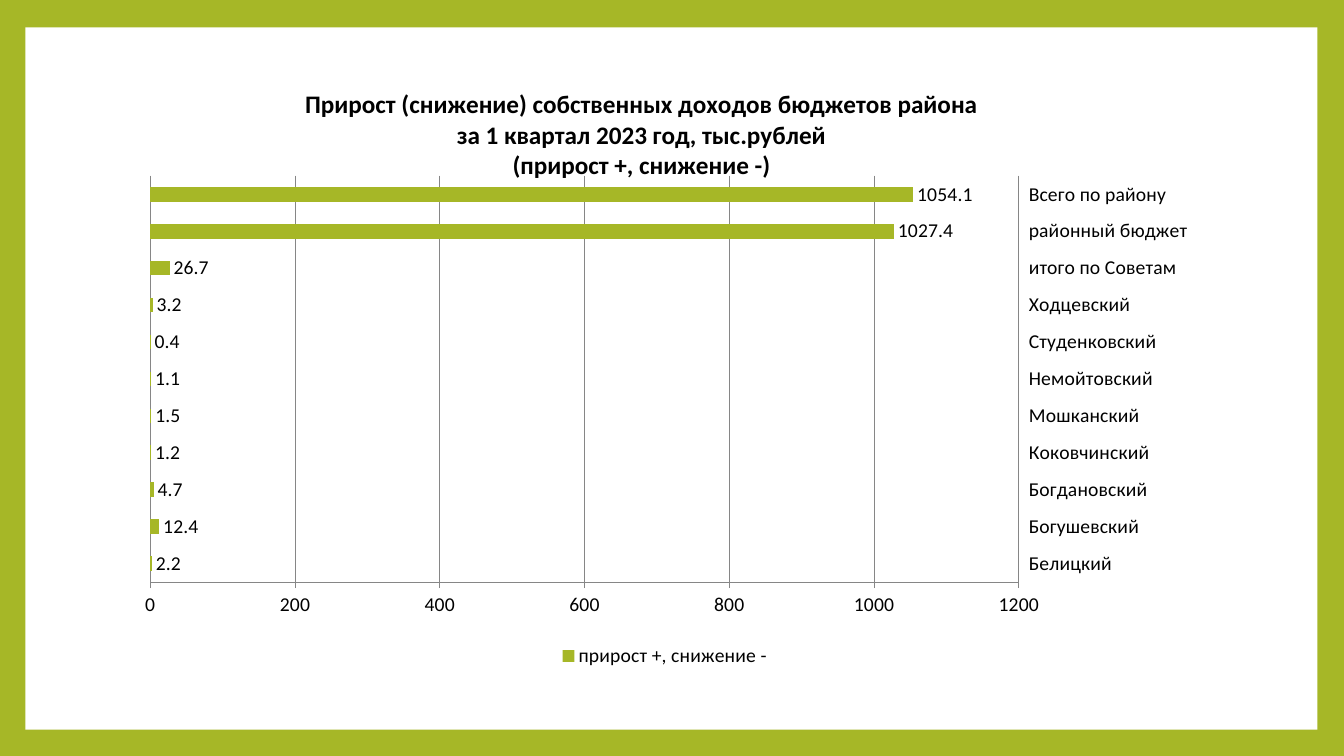
from typing import NamedTuple

from lxml.etree import SubElement
from pptx import Presentation
from pptx.chart.data import CategoryChartData
from pptx.dml.color import RGBColor
from pptx.enum.chart import (XL_CHART_TYPE, XL_LABEL_POSITION, XL_LEGEND_POSITION,
                             XL_TICK_LABEL_POSITION, XL_TICK_MARK)
from pptx.enum.shapes import MSO_SHAPE
from pptx.enum.text import PP_ALIGN
from pptx.oxml import parse_xml
from pptx.oxml.ns import nsdecls, qn
from pptx.util import Cm, Pt

GREEN = RGBColor(0xA6, 0xB7, 0x27)
WHITE = RGBColor(0xFF, 0xFF, 0xFF)
BLACK = RGBColor(0, 0, 0)
GRAY = RGBColor(0x86, 0x86, 0x86)
FONT = "Calibri"


class Budget(NamedTuple):
    name: str
    growth: float


BUDGETS = [
    Budget("Белицкий", 2.2),
    Budget("Богушевский", 12.4),
    Budget("Богдановский", 4.7),
    Budget("Коковчинский", 1.2),
    Budget("Мошканский", 1.5),
    Budget("Немойтовский", 1.1),
    Budget("Студенковский", 0.4),
    Budget("Ходцевский", 3.2),
    Budget("итого по Советам", 26.7),
    Budget("районный бюджет", 1027.4),
    Budget("Всего по району", 1054.1),
]
TITLE_LINES = [
    "Прирост (снижение) собственных доходов бюджетов района",
    "за 1 квартал 2023 год, тыс.рублей",
    "(прирост +, снижение -)",
]


def set_font(font, size: int, bold: bool = False) -> None:
    font.name, font.size, font.bold = FONT, Pt(size), bold
    font.color.rgb = BLACK


def set_layout(parent, index: int, **settings: str | float) -> None:
    """Give a chart part a manual layout, in fractions of the chart."""
    for old in parent.findall(qn("c:layout")):
        parent.remove(old)
    layout = parse_xml(f"<c:layout {nsdecls('c')}><c:manualLayout/></c:layout>")
    for tag, value in settings.items():
        SubElement(layout[0], qn(f"c:{tag}")).set("val", str(value))
    parent.insert(index, layout)


def style_axis(axis, tick: XL_TICK_MARK) -> None:
    axis.major_tick_mark = tick
    axis.minor_tick_mark = XL_TICK_MARK.NONE
    axis.format.line.color.rgb = GRAY
    set_font(axis.tick_labels.font, 14)


def add_growth_chart(s) -> None:
    data = CategoryChartData()
    data.categories = [b.name for b in BUDGETS]
    data.add_series("прирост +, снижение -", [b.growth for b in BUDGETS])
    chart = s.shapes.add_chart(XL_CHART_TYPE.BAR_CLUSTERED, Cm(2.9), Cm(1.83),
                               Cm(27.71), Cm(15.11), data).chart
    set_font(chart.font, 10)

    # Title
    tf = chart.chart_title.text_frame
    for i, line in enumerate(TITLE_LINES):
        p = tf.add_paragraph() if i else tf.paragraphs[0]
        p.text = line
        p.alignment = PP_ALIGN.CENTER
        set_font(p.font, 18, bold=True)
    chart.chart_title.include_in_layout = False
    set_layout(chart.element.find(f".//{qn('c:title')}"), 1,
               xMode="edge", yMode="edge", x=0.17, y=0.02)

    # Bars and their values
    set_layout(chart.element.find(f".//{qn('c:plotArea')}"), 0,
               layoutTarget="inner", xMode="edge", yMode="edge",
               x=0.032, y=0.172, w=0.79, h=0.678)
    plot = chart.plots[0]
    plot.gap_width = 150
    plot.vary_by_categories = False
    series = plot.series[0]
    series.format.fill.solid()
    series.format.fill.fore_color.rgb = GREEN
    labels = series.data_labels
    labels.show_value = True
    labels.position = XL_LABEL_POSITION.OUTSIDE_END
    set_font(labels.font, 14)

    # Axes: budget names stand on the right
    style_axis(chart.category_axis, XL_TICK_MARK.NONE)
    chart.category_axis.tick_label_position = XL_TICK_LABEL_POSITION.HIGH
    values = chart.value_axis
    style_axis(values, XL_TICK_MARK.OUTSIDE)
    values.minimum_scale, values.maximum_scale, values.major_unit = 0, 1200, 200
    values.has_major_gridlines = True
    values.major_gridlines.format.line.color.rgb = GRAY

    # Legend
    chart.has_legend = True
    chart.legend.position = XL_LEGEND_POSITION.BOTTOM
    chart.legend.include_in_layout = False
    set_font(chart.legend.font, 14)


def main() -> None:
    prs = Presentation()
    prs.slide_width, prs.slide_height = Cm(33.87), Cm(19.05)
    s = prs.slides.add_slide(prs.slide_layouts[6])

    # Green frame around a white panel
    s.background.fill.solid()
    s.background.fill.fore_color.rgb = GREEN
    panel = s.shapes.add_shape(MSO_SHAPE.RECTANGLE, Cm(0.64), Cm(0.69), Cm(32.56), Cm(17.7))
    panel.shadow.inherit = False
    panel.fill.solid()
    panel.fill.fore_color.rgb = WHITE
    panel.line.fill.background()

    add_growth_chart(s)
    prs.save("out.pptx")


if __name__ == "__main__":
    main()
